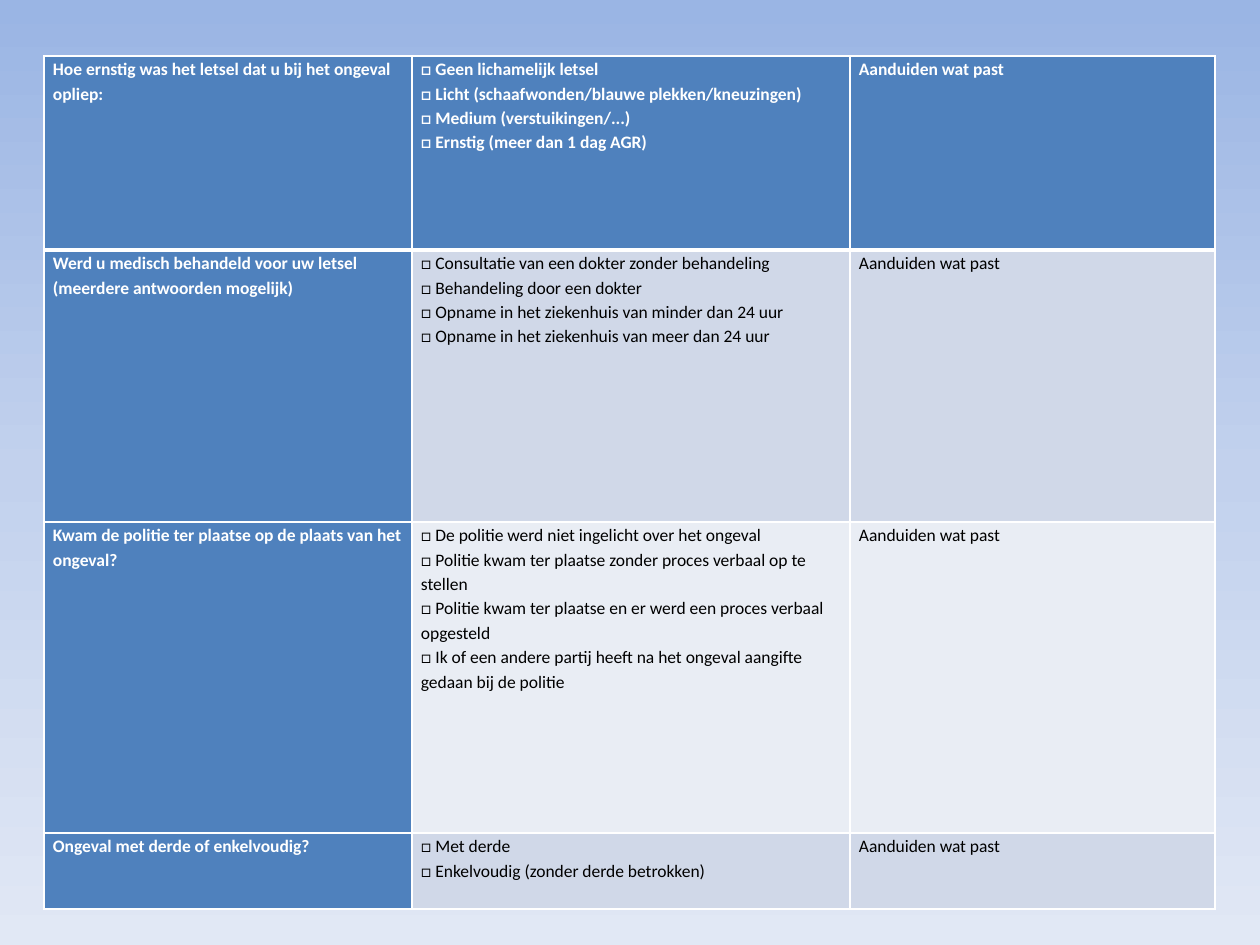
import copy

import lxml.etree
import pptx
import pptx.dml.color
import pptx.oxml.ns
import pptx.util

PX = 914400 // 126
COLORS = {
    "sky_top": "9AB5E4", "sky_middle": "C2D1ED", "sky_bottom": "E1E8F5",
    "heading": "4F81BD", "band_dark": "D0D8E8", "band_light": "E9EDF4",
    "white": "FFFFFF", "black": "000000",
}
ANSWER_HINT = "Aanduiden wat past"
QUESTIONS = [
    ("Hoe ernstig was het letsel dat u bij het ongeval opliep:",
     ["Geen lichamelijk letsel",
      "Licht (schaafwonden/blauwe plekken/kneuzingen)",
      "Medium (verstuikingen/...)",
      "Ernstig (meer dan 1 dag AGR)"]),
    ("Werd u medisch behandeld voor uw letsel (meerdere antwoorden mogelijk)",
     ["Consultatie van een dokter zonder behandeling",
      "Behandeling door een dokter",
      "Opname in het ziekenhuis van minder dan 24 uur",
      "Opname in het ziekenhuis van meer dan 24 uur"]),
    ("Kwam de politie ter plaatse op de plaats van het ongeval?",
     ["De politie werd niet ingelicht over het ongeval",
      "Politie kwam ter plaatse zonder proces verbaal op te stellen",
      "Politie kwam ter plaatse en er werd een proces verbaal opgesteld",
      "Ik of een andere partij heeft na het ongeval aangifte gedaan bij de politie"]),
    ("Ongeval met derde of enkelvoudig?",
     ["Met derde", "Enkelvoudig (zonder derde betrokken)"]),
]


def rgb(name):
    """Return the named colour as an RGBColor."""
    return pptx.dml.color.RGBColor.from_string(COLORS[name])


def write_text(frame, text, size=10, font="Calibri", color="black", bold=False):
    """Write text into a frame, with line breaks that share its format."""
    frame.word_wrap = True
    paragraph = frame.paragraphs[0]
    paragraph.text = text
    paragraph.line_spacing = 1.15
    paragraph.space_after = pptx.util.Pt(10)
    for run in paragraph.runs:
        run.font.size = pptx.util.Pt(size)
        run.font.name = font
        run.font.bold = bold
        run.font.color.rgb = rgb(color)
    run_format = paragraph.runs[0].font._element
    for line_break in paragraph._p.findall(pptx.oxml.ns.qn("a:br")):
        line_break.append(copy.deepcopy(run_format))


def draw_borders(cell, top, bottom):
    """Give a cell white borders of the given top and bottom widths."""
    properties = cell._tc.get_or_add_tcPr()
    for side, points in (("L", 1), ("R", 1), ("T", top), ("B", bottom)):
        line = lxml.etree.SubElement(
            properties, pptx.oxml.ns.qn(f"a:ln{side}"), w=str(pptx.util.Pt(points)))
        fill = lxml.etree.SubElement(line, pptx.oxml.ns.qn("a:solidFill"))
        lxml.etree.SubElement(fill, pptx.oxml.ns.qn("a:srgbClr"), val=COLORS["white"])


def paint_background(slide):
    """Fill the slide with a three-stop gradient from top to bottom."""
    fill = slide.background.fill
    fill.gradient()
    fill.gradient_angle = 270
    first_stop = fill.gradient_stops[0]._gs
    first_stop.addnext(copy.deepcopy(first_stop))
    sky = ("sky_top", "sky_middle", "sky_bottom")
    for index, (stop, color) in enumerate(zip(fill.gradient_stops, sky)):
        stop.position = index / 2
        stop.color.rgb = rgb(color)


def add_questionnaire(slide, left, top, widths, heights):
    """Place the question table with its given column widths and row heights."""
    table = slide.shapes.add_table(
        len(heights), len(widths), left * PX, top * PX,
        sum(widths) * PX, sum(heights) * PX).table
    for column, width in zip(table.columns, widths):
        column.width = width * PX
    for row, height in zip(table.rows, heights):
        row.height = height * PX
    for row, (question, options) in enumerate(QUESTIONS):
        choices = "\n".join(f"□ {option}" for option in options)
        for column, text in enumerate((question, choices, ANSWER_HINT)):
            cell = table.cell(row, column)
            heading = row == 0 or column == 0
            band = "band_dark" if row % 2 else "band_light"
            cell.margin_left = cell.margin_right = 9 * PX
            cell.margin_top = cell.margin_bottom = 0
            draw_borders(cell, top=3 if row == 1 else 1, bottom=3 if row == 0 else 1)
            cell.fill.solid()
            cell.fill.fore_color.rgb = rgb("heading" if heading else band)
            write_text(cell.text_frame, text,
                       color="white" if heading else "black", bold=heading)


def main():
    """Build and save the slide."""
    presentation = pptx.Presentation()
    presentation.slide_width = pptx.util.Inches(10)
    presentation.slide_height = pptx.util.Inches(7.5)
    slide = presentation.slides.add_slide(presentation.slide_layouts[6])
    paint_background(slide)
    add_questionnaire(slide, 44, 56, (368, 438, 365), (194, 272, 311, 76))
    presentation.save("out.pptx")


if __name__ == "__main__":
    main()
